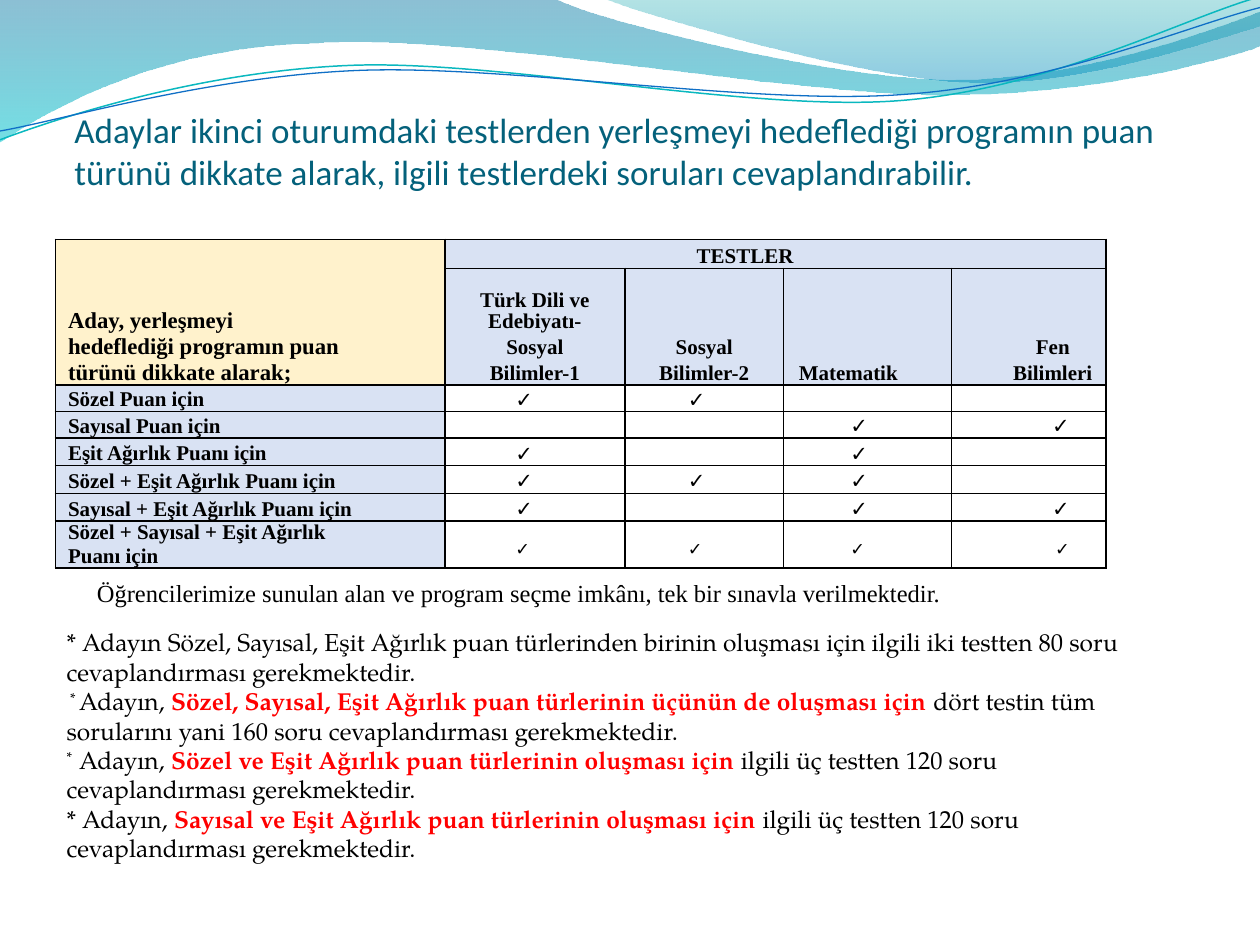
from lxml.etree import SubElement
from pptx import Presentation
from pptx.dml.color import RGBColor
from pptx.enum.text import MSO_ANCHOR, PP_ALIGN
from pptx.oxml.ns import qn
from pptx.util import Inches, Pt

BLACK = RGBColor(0x00, 0x00, 0x00)
RED = RGBColor(0xFF, 0x00, 0x00)
TITLE_BLUE = RGBColor(0x04, 0x61, 0x7B)
CREAM = RGBColor(0xFF, 0xF2, 0xCC)
PALE_BLUE = RGBColor(0xD9, 0xE2, 0xF3)
DEEP_BLUE = RGBColor(0x00, 0x74, 0xA1)
AQUA = RGBColor(0x00, 0xC6, 0xCF)
TEAL = RGBColor(0x00, 0xA1, 0xA9)
SKY = RGBColor(0x00, 0x8B, 0xBF)
LINE_TEAL = RGBColor(0x0A, 0xB8, 0xBF)
LINE_BLUE = RGBColor(0x0F, 0x6F, 0xC6)

SERIF = "Times New Roman"
BODY = "TeX Gyre Pagella"
TICK = "✓"

COLUMNS = [0.1, 2.91, 0.08, 1.43, 1.26, 1.33, 1.23]
ROWS = [0.23, 0.35, 0.15, 0.18, 0.18, 0.21, 0.21, 0.22, 0.22, 0.22, 0.17, 0.1, 0.07]
TICK_INDENTS = {3: 0.56, 4: 0.5, 5: 0.53}
TICK_RIGHT = 0.29
SCORES = [
    ("Sözel Puan için", (3, 4)),
    ("Sayısal Puan için", (5, 6)),
    ("Eşit Ağırlık Puanı için", (3, 5)),
    ("Sözel + Eşit Ağırlık Puanı için", (3, 4, 5)),
    ("Sayısal + Eşit Ağırlık Puanı için", (3, 5, 6)),
]
# row, column, text, size, settings
HEADINGS = [
    (0, 4, "TESTLER", 12, {"left": 0.57}),
    (1, 1, "Aday, yerleşmeyi", 13, {}),
    (3, 1, "hedeflediği programın puan", 13, {"spacing": 14.8}),
    (4, 1, "türünü dikkate alarak;", 13, {"spacing": 14.8}),
    (1, 3, "Türk Dili ve", 12, {"align": PP_ALIGN.CENTER}),
    (2, 3, "Edebiyatı-", 12, {"align": PP_ALIGN.CENTER, "spacing": 11.8}),
    (3, 3, "Sosyal", 12, {"align": PP_ALIGN.CENTER}),
    (4, 3, "Bilimler-1", 12, {"align": PP_ALIGN.CENTER}),
    (3, 4, "Sosyal", 12, {"align": PP_ALIGN.CENTER}),
    (4, 4, "Bilimler-2", 12, {"align": PP_ALIGN.CENTER}),
    (4, 5, "Matematik", 12, {"left": 0.12}),
    (3, 6, "Fen", 12, {"align": PP_ALIGN.RIGHT, "right": 0.29}),
    (4, 6, "Bilimleri", 12, {"align": PP_ALIGN.RIGHT, "right": 0.11}),
]
# star, is it raised, lead, red part, ending
NOTES = [
    ("* ", False, "Adayın Sözel, Sayısal, Eşit Ağırlık puan türlerinden birinin oluşması için "
     "ilgili iki testten 80 soru cevaplandırması gerekmektedir.", "", ""),
    (" * ", True, "Adayın, ",
     "Sözel, Sayısal, Eşit Ağırlık puan türlerinin üçünün de oluşması için ",
     "dört testin tüm sorularını yani 160 soru cevaplandırması gerekmektedir."),
    ("*  ", True, "Adayın, ", "Sözel ve Eşit Ağırlık puan türlerinin oluşması için ",
     "ilgili üç testten 120 soru cevaplandırması gerekmektedir."),
    ("* ", False, "Adayın, ", "Sayısal ve Eşit Ağırlık puan türlerinin oluşması için ",
     "ilgili üç testten 120 soru cevaplandırması gerekmektedir."),
]


def style_font(font, name, size, color=BLACK, bold=False):
    font.name, font.size, font.bold = name, Pt(size), bold
    font.color.rgb = color


def add_outline(page, start, segments, close):
    """A segment of one point is a line, one of three points a Bézier curve."""
    points = [(Inches(x), Inches(y)) for segment in segments for x, y in segment]
    builder = page.shapes.build_freeform(Inches(start[0]), Inches(start[1]))
    builder.add_line_segments(points, close=close)
    shape = builder.convert_to_shape()
    shape.shadow.inherit = False
    straight = iter(list(shape.element.iter(qn("a:lnTo"))))
    for segment in segments:
        parts = [next(straight) for point in segment]
        if len(parts) == 3:
            parts[0].tag = qn("a:cubicBezTo")
            for part in parts[1:]:
                parts[0].append(part[0])
                part.getparent().remove(part)
    return shape


def add_wave(page, start, segments, stops):
    """stops holds a colour and an opacity in percent, top and bottom."""
    shape = add_outline(page, start, segments, True)
    shape.line.fill.background()
    shape.fill.gradient()
    shape.fill.gradient_angle = 270
    for stop, (color, opacity) in zip(shape.fill.gradient_stops, stops):
        stop.color.rgb = color
    for tint, (color, opacity) in zip(shape.element.spPr.iter(qn("a:srgbClr")), stops):
        SubElement(tint, qn("a:alpha"), val=str(opacity * 1000))


def add_curve(page, start, segments, color, width):
    shape = add_outline(page, start, segments, False)
    shape.fill.background()
    shape.line.color.rgb = color
    shape.line.width = Pt(width)


def add_waves(page):
    add_wave(page, (0, 0), [
        [(4.4, -0.01)], [(4.76, 0.17), (6.64, 0.63), (7.58, 0.63)],
        [(8.53, 0.63), (9.58, 0.26), (10, 0.09)], [(10.01, 0.36)],
        [(9.83, 0.44), (8.7, 0.76), (7.46, 0.75)], [(6.22, 0.75), (3.82, 0.28), (2.57, 0.34)],
        [(1.29, 0.36), (0.46, 0.83), (-0.01, 1.13)]], [(DEEP_BLUE, 45), (AQUA, 55)])
    add_wave(page, (4.79, -0.01), [
        [(5.09, 0.11), (6.82, 0.62), (7.69, 0.65)],
        [(8.56, 0.69), (9.61, 0.32), (10, 0.21)], [(10, 0)]], [(TEAL, 30), (SKY, 45)])
    add_curve(page, (0, 1.11), [
        [(0.48, 0.93), (1.58, 0.57), (2.77, 0.52)], [(3.95, 0.47), (5.93, 0.89), (7.13, 0.8)],
        [(8.33, 0.71), (9.38, 0.15), (9.98, -0.02)]], LINE_TEAL, 0.85)
    add_curve(page, (0, 1.04), [
        [(0.47, 0.96), (1.64, 0.61), (2.83, 0.56)], [(4.03, 0.51), (5.97, 0.84), (7.17, 0.75)],
        [(8.36, 0.67), (9.41, 0.21), (10, 0.06)]], LINE_BLUE, 0.75)


def set_title(page, text):
    title = page.shapes.title
    title.left, title.top, title.width, title.height = map(Inches, (0.59, 0.86, 9, 0.94))
    title.element.getparent().append(title.element)
    frame = title.text_frame
    frame.text = text
    frame.vertical_anchor = MSO_ANCHOR.TOP
    frame.margin_left = frame.margin_right = frame.margin_top = frame.margin_bottom = 0
    para = frame.paragraphs[0]
    para.alignment = PP_ALIGN.LEFT
    style_font(para.font, "Calibri", 20, TITLE_BLUE)


def draw_block(table, rows, columns, fill=None):
    """Fill a range of cells and draw a border around it only."""
    for row in rows:
        for column in columns:
            cell = table.cell(row, column)
            bottom = row + (cell.span_height if cell.is_merge_origin else 1) - 1
            properties = cell._tc.get_or_add_tcPr()
            edges = {"a:lnL": column == columns[0], "a:lnR": column == columns[-1],
                     "a:lnT": row == rows[0], "a:lnB": bottom == rows[-1]}
            for tag, outer in edges.items():
                line = SubElement(properties, qn(tag), w=str(Pt(1)))
                paint = SubElement(line, qn("a:solidFill" if outer else "a:noFill"))
                if outer:
                    SubElement(paint, qn("a:srgbClr"), val=str(BLACK))
            if fill is None:
                cell.fill.background()
            else:
                cell.fill.solid()
                cell.fill.fore_color.rgb = fill


def write_cell(cell, text, size, font=SERIF, bold=True, align=PP_ALIGN.LEFT,
               left=0, right=0, spacing=None):
    cell.text = text
    cell.margin_left, cell.margin_right = Inches(left), Inches(right)
    para = cell.text_frame.paragraphs[0]
    para.alignment = align
    if spacing:
        para.line_spacing = Pt(spacing)
    style_font(para.font, font, size, BLACK, bold)


def write_tick(table, row, column, size=12, spacing=None):
    indent = TICK_INDENTS.get(column)
    place = {"left": indent} if indent else {"align": PP_ALIGN.RIGHT, "right": TICK_RIGHT}
    write_cell(table.cell(row, column), TICK, size, "Arial", False, spacing=spacing, **place)


def add_score_table(page):
    frame = page.shapes.add_table(len(ROWS), len(COLUMNS), Inches(0.44), Inches(1.9),
                                  Inches(sum(COLUMNS)), Inches(sum(ROWS)))
    table = frame.table
    table.first_row = table.horz_banding = False
    for column, width in zip(table.columns, COLUMNS):
        column.width = Inches(width)
    for row, height in zip(table.rows, ROWS):
        row.height = Inches(height)
    for cell in table.iter_cells():
        cell.margin_left = cell.margin_right = cell.margin_top = cell.margin_bottom = 0
        cell.vertical_anchor = MSO_ANCHOR.BOTTOM
        # a small end mark keeps empty cells from stretching the low rows
        SubElement(cell.text_frame.paragraphs[0]._p, qn("a:endParaRPr"), sz="400")
    for start, end in (((0, 4), (0, 5)), ((1, 1), (2, 1)), ((11, 1), (12, 1))):
        table.cell(*start).merge(table.cell(*end))

    label, tests = range(3), range(3, 7)
    score_rows = [range(row, row + 1) for row in range(5, 10)] + [range(10, 13)]
    draw_block(table, range(5), label, CREAM)
    draw_block(table, range(1), tests, PALE_BLUE)
    for rows in score_rows:
        draw_block(table, rows, label, PALE_BLUE)
    for column in tests:
        draw_block(table, range(1, 5), [column], PALE_BLUE)
        for rows in score_rows:
            draw_block(table, rows, [column])

    for row, column, text, size, settings in HEADINGS:
        write_cell(table.cell(row, column), text, size, **settings)
    for row, (name, ticked) in enumerate(SCORES, 5):
        write_cell(table.cell(row, 1), name, 12)
        for column in ticked:
            write_tick(table, row, column)
    write_cell(table.cell(10, 1), "Sözel + Sayısal + Eşit Ağırlık", 12)
    write_cell(table.cell(11, 1), "Puanı için", 12)
    for column in tests:
        write_tick(table, 11, column, 10, 8.4)


def add_text_frame(page, left, top, width, height):
    box = page.shapes.add_textbox(*map(Inches, (left, top, width, height)))
    box.text_frame.word_wrap = True
    return box.text_frame


def add_notes(page):
    frame = add_text_frame(page, 0.43, 4.93, 8.9, 1.99)
    for index, (star, raised, lead, stress, ending) in enumerate(NOTES):
        para = frame.add_paragraph() if index else frame.paragraphs[0]
        for text in filter(None, (star, lead, stress, ending)):
            span = para.add_run()
            span.text = text
            style_font(span.font, BODY, 14, RED if text == stress else BLACK, text == stress)
        if raised:
            para.runs[0].font._element.set("baseline", "30000")


def add_caption(page, text):
    frame = add_text_frame(page, 0.67, 4.3, 8.58, 0.57)
    frame.vertical_anchor = MSO_ANCHOR.BOTTOM
    frame.text = text
    style_font(frame.paragraphs[0].font, SERIF, 14)


def main():
    deck = Presentation()
    deck.slide_width, deck.slide_height = Inches(10), Inches(7.5)
    page = deck.slides.add_slide(deck.slide_layouts[5])
    add_waves(page)
    set_title(page, "Adaylar ikinci oturumdaki testlerden yerleşmeyi hedeflediği programın puan "
                    "türünü dikkate alarak, ilgili testlerdeki soruları cevaplandırabilir.")
    add_score_table(page)
    add_notes(page)
    add_caption(page, "Öğrencilerimize sunulan alan ve program seçme imkânı, "
                      "tek bir sınavla verilmektedir.")
    deck.save("out.pptx")


if __name__ == "__main__":
    main()
